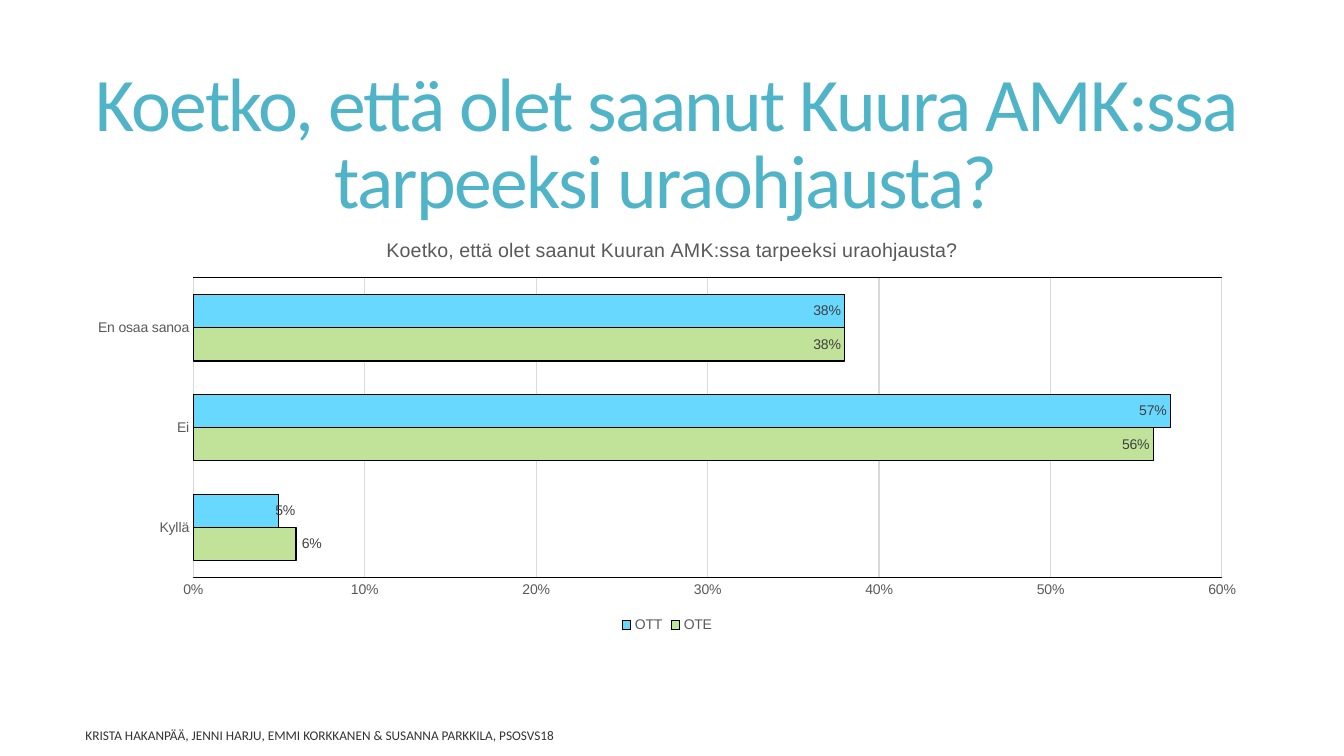
from typing import Any, NamedTuple

from lxml import etree
from pptx import Presentation
from pptx.chart.data import CategoryChartData
from pptx.dml.color import RGBColor
from pptx.enum import chart as ch, text as tx
from pptx.oxml import parse_xml
from pptx.oxml.ns import nsdecls, qn
from pptx.util import Pt


class Group(NamedTuple):
    name: str
    vals: tuple[float, ...]
    fill: str
    shift: float  # sideways move of the first label, as a share of chart width


GROUPS = [
    Group("OTE", (0.06, 0.56, 0.38), "C0E399", 0.025),
    Group("OTT", (0.05, 0.57, 0.38), "69D8FF", 0.017),
]
CATS = ["Kyllä", "Ei", "En osaa sanoa"]


def rgb(code: str) -> RGBColor:
    return RGBColor.from_string(code)


def apply(item: Any, **vals: Any) -> None:
    for key, val in vals.items():
        setattr(item, key, val)


def style(font: Any, size: float, color: str, name: str = "Arial") -> None:
    apply(font, size=Pt(size), name=name, bold=False)
    font.color.rgb = rgb(color)


def stroke(line: Any, color: str) -> None:
    line.color.rgb = rgb(color)
    line.width = Pt(0.75)


def place(node: Any, index: int, inner: bool = False, edge: bool = True, **spots: float) -> None:
    """Give a chart part a manual layout, as shares of the chart's size."""
    for old in node.findall(qn("c:layout")):
        node.remove(old)
    layout = etree.Element(qn("c:layout"))
    manual = etree.SubElement(layout, qn("c:manualLayout"))
    if inner:
        etree.SubElement(manual, qn("c:layoutTarget"), val="inner")
    if edge:
        for mode in ("xMode", "yMode"):
            etree.SubElement(manual, qn(f"c:{mode}"), val="edge")
    for key, val in spots.items():
        etree.SubElement(manual, qn(f"c:{key}"), val=str(val))
    node.insert(index, layout)


def add_title(slide: Any) -> None:
    title = slide.shapes.title
    apply(title, left=Pt(51.8), top=Pt(39.6), width=Pt(848.2), height=Pt(130.3))
    frame = title.text_frame
    frame.text = "Koetko, että olet saanut Kuura AMK:ssa tarpeeksi uraohjausta?"
    apply(frame, vertical_anchor=tx.MSO_ANCHOR.MIDDLE, auto_size=tx.MSO_AUTO_SIZE.NONE, word_wrap=True)
    para = frame.paragraphs[0]
    apply(para, alignment=tx.PP_ALIGN.CENTER, line_spacing=0.85)
    run = para.runs[0]
    style(run.font, 54, "50B4C8", "Calibri")
    run.font._element.set("spc", "-120")


def add_footer(slide: Any) -> None:
    box = slide.shapes.add_textbox(Pt(54), Pt(516.2), Pt(396), Pt(18))
    frame = box.text_frame
    apply(frame, word_wrap=True, vertical_anchor=tx.MSO_ANCHOR.MIDDLE)
    run = frame.paragraphs[0].add_run()
    run.text = "KRISTA HAKANPÄÄ, JENNI HARJU, EMMI KORKKANEN & SUSANNA PARKKILA, PSOSVS18"
    style(run.font, 9.5, "000000", "Calibri")
    color = run.font._element.find(f".//{qn('a:srgbClr')}")
    etree.SubElement(color, qn("a:alpha"), val="80000")


def style_axes(chart: Any) -> None:
    for axis in (chart.category_axis, chart.value_axis):
        apply(axis, major_tick_mark=ch.XL_TICK_MARK.NONE, minor_tick_mark=ch.XL_TICK_MARK.NONE)
        style(axis.tick_labels.font, 10, "595959")
    stroke(chart.category_axis.format.line, "D9D9D9")
    scale = chart.value_axis
    apply(scale, minimum_scale=0, maximum_scale=0.6, major_unit=0.1, has_major_gridlines=True)
    apply(scale.tick_labels, number_format="0%", number_format_is_linked=False)
    scale.format.line.fill.background()
    stroke(scale.major_gridlines.format.line, "D9D9D9")


def style_bars(plot: Any) -> None:
    apply(plot, gap_width=100, overlap=0, vary_by_categories=False)
    for bars, group in zip(plot.series, GROUPS):
        bars.format.fill.solid()
        bars.format.fill.fore_color.rgb = rgb(group.fill)
        stroke(bars.format.line, "000000")
        first = bars.points[0].data_label
        labels = bars.data_labels
        apply(labels, show_value=True, number_format="0%", number_format_is_linked=False)
        for label in (labels, first):
            label.position = ch.XL_LABEL_POSITION.INSIDE_END
            style(label.font, 10, "404040")
        node = labels._element.find(qn("c:dLbl"))
        place(node, 1, edge=False, x=group.shift, y=0)


def add_bars(slide: Any) -> None:
    data = CategoryChartData(number_format="0%")
    data.categories = CATS
    for group in GROUPS:
        data.add_series(group.name, group.vals)
    chart = slide.shapes.add_chart(
        ch.XL_CHART_TYPE.BAR_CLUSTERED, Pt(53.3), Pt(158.4), Pt(846.7), Pt(296.6), data
    ).chart
    style(chart.font, 10, "000000", "Calibri")

    chart.has_title = True
    head = chart.chart_title
    head.text_frame.text = "Koetko, että olet saanut Kuuran AMK:ssa tarpeeksi uraohjausta?"
    style(head.text_frame.paragraphs[0].runs[0].font, 14, "595959")
    place(head._element, 1, x=0.26, y=0.03)

    chart.has_legend = True
    apply(chart.legend, position=ch.XL_LEGEND_POSITION.BOTTOM, include_in_layout=False)
    style(chart.legend.font, 10, "595959")

    style_axes(chart)
    style_bars(chart.plots[0])
    area = chart._chartSpace.chart.plotArea
    place(area, 0, inner=True, x=0.1, y=0.135, w=0.868, h=0.722)
    area.append(parse_xml(
        f'<c:spPr {nsdecls("c", "a")}><a:noFill/><a:ln w="{Pt(0.75)}"><a:solidFill>'
        '<a:srgbClr val="000000"/></a:solidFill></a:ln></c:spPr>'
    ))


def main() -> None:
    deck = Presentation()
    apply(deck, slide_width=Pt(960), slide_height=Pt(540))
    slide = deck.slides.add_slide(deck.slide_layouts[5])
    add_title(slide)
    add_footer(slide)
    add_bars(slide)
    deck.save("out.pptx")


if __name__ == "__main__":
    main()
